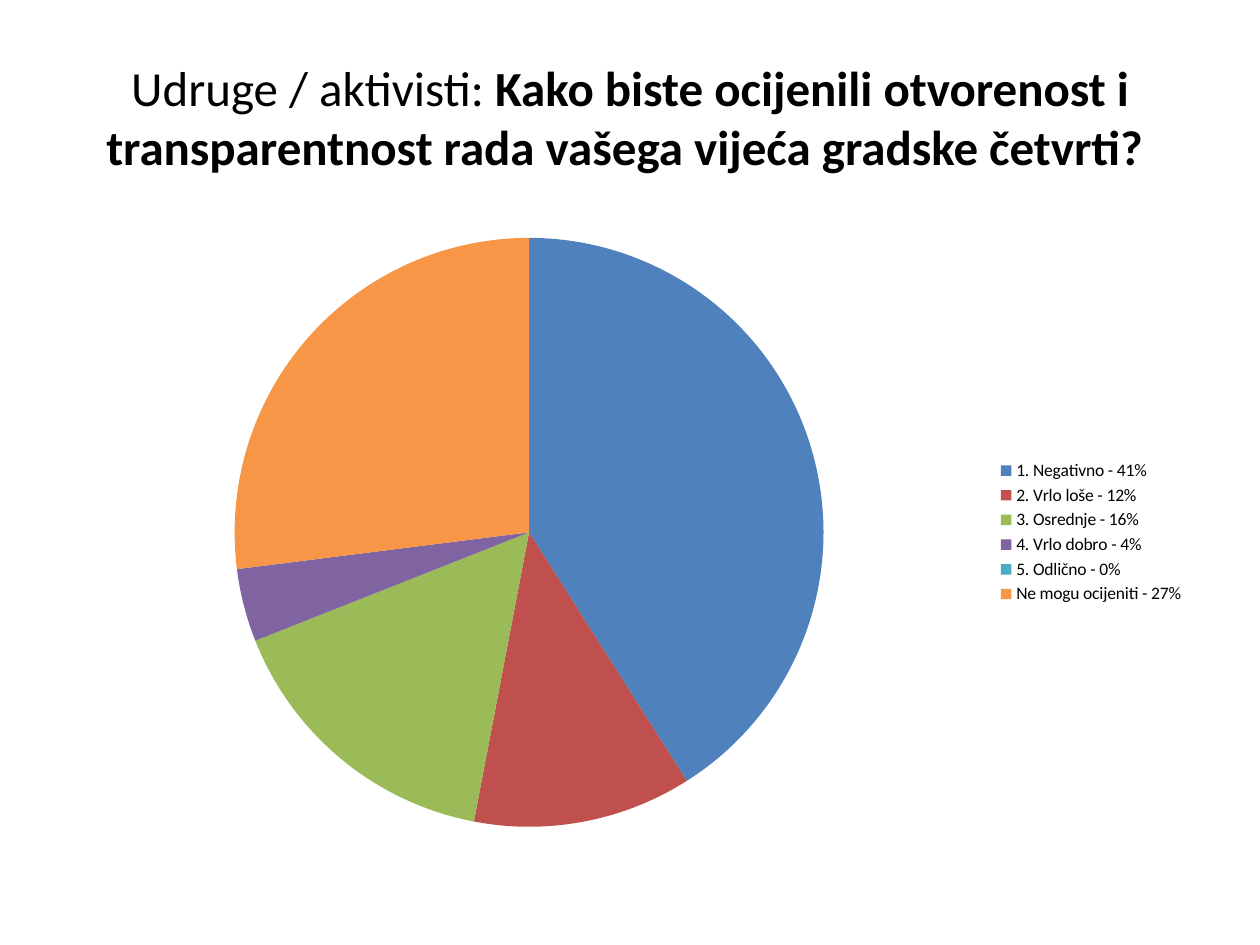
"""Build a slide with a pie chart of survey answers on council transparency."""
from typing import NamedTuple

from pptx import Presentation
from pptx.chart.data import CategoryChartData
from pptx.dml.color import RGBColor
from pptx.enum.chart import XL_CHART_TYPE, XL_LEGEND_POSITION
from pptx.enum.text import MSO_ANCHOR, PP_ALIGN
from pptx.util import Inches, Pt

PIE = XL_CHART_TYPE.PIE
RIGHT = XL_LEGEND_POSITION.RIGHT
MIDDLE = MSO_ANCHOR.MIDDLE
CENTER = PP_ALIGN.CENTER
FONT = "Calibri"
BLACK = "000000"


class Answer(NamedTuple):
    label: str
    percent: int
    color: str


ANSWERS = [
    Answer("1. Negativno", 41, "4F81BD"),
    Answer("2. Vrlo loše", 12, "C0504D"),
    Answer("3. Osrednje", 16, "9BBB59"),
    Answer("4. Vrlo dobro", 4, "8064A2"),
    Answer("5. Odlično", 0, "4BACC6"),
    Answer("Ne mogu ocijeniti", 27, "F79646"),
]


def rgb(color: str) -> RGBColor:
    return RGBColor.from_string(color)


def set_font(font, size: float) -> None:
    font.name = FONT
    font.size = Pt(size)
    font.color.rgb = rgb(BLACK)


def add_title(s, group: str, question: str) -> None:
    sp = s.shapes.title
    sp.left, sp.top = Inches(0.5), Inches(0.3)
    sp.width, sp.height = Inches(9), Inches(1.25)
    tf = sp.text_frame
    tf.word_wrap = True
    tf.vertical_anchor = MIDDLE
    p = tf.paragraphs[0]
    p.alignment = CENTER
    set_font(p.font, 28)
    p.add_run().text = group
    r = p.add_run()
    r.text = question
    r.font.bold = True


def add_pie(s, answers: list[Answer]) -> None:
    data = CategoryChartData()
    data.categories = [f"{a.label} - {a.percent}%" for a in answers]
    data.add_series("Series 1", [a.percent for a in answers])
    chart = s.shapes.add_chart(
        PIE, Inches(0.5), Inches(1.75), Inches(9), Inches(4.95), data
    ).chart
    set_font(chart.font, 10)
    chart.has_title = False
    chart.has_legend = True
    chart.legend.position = RIGHT
    chart.legend.include_in_layout = False
    plot = chart.plots[0]
    plot.vary_by_categories = True
    for i, answer in enumerate(answers):
        fill = plot.series[0].points[i].format.fill
        fill.solid()
        fill.fore_color.rgb = rgb(answer.color)


def main() -> None:
    prs = Presentation()
    prs.slide_width, prs.slide_height = Inches(10), Inches(7.5)
    s = prs.slides.add_slide(prs.slide_layouts[5])
    add_title(
        s,
        "Udruge / aktivisti: ",
        "Kako biste ocijenili otvorenost i transparentnost rada "
        "vašega vijeća gradske četvrti? ",
    )
    add_pie(s, ANSWERS)
    prs.save("out.pptx")


if __name__ == "__main__":
    main()
